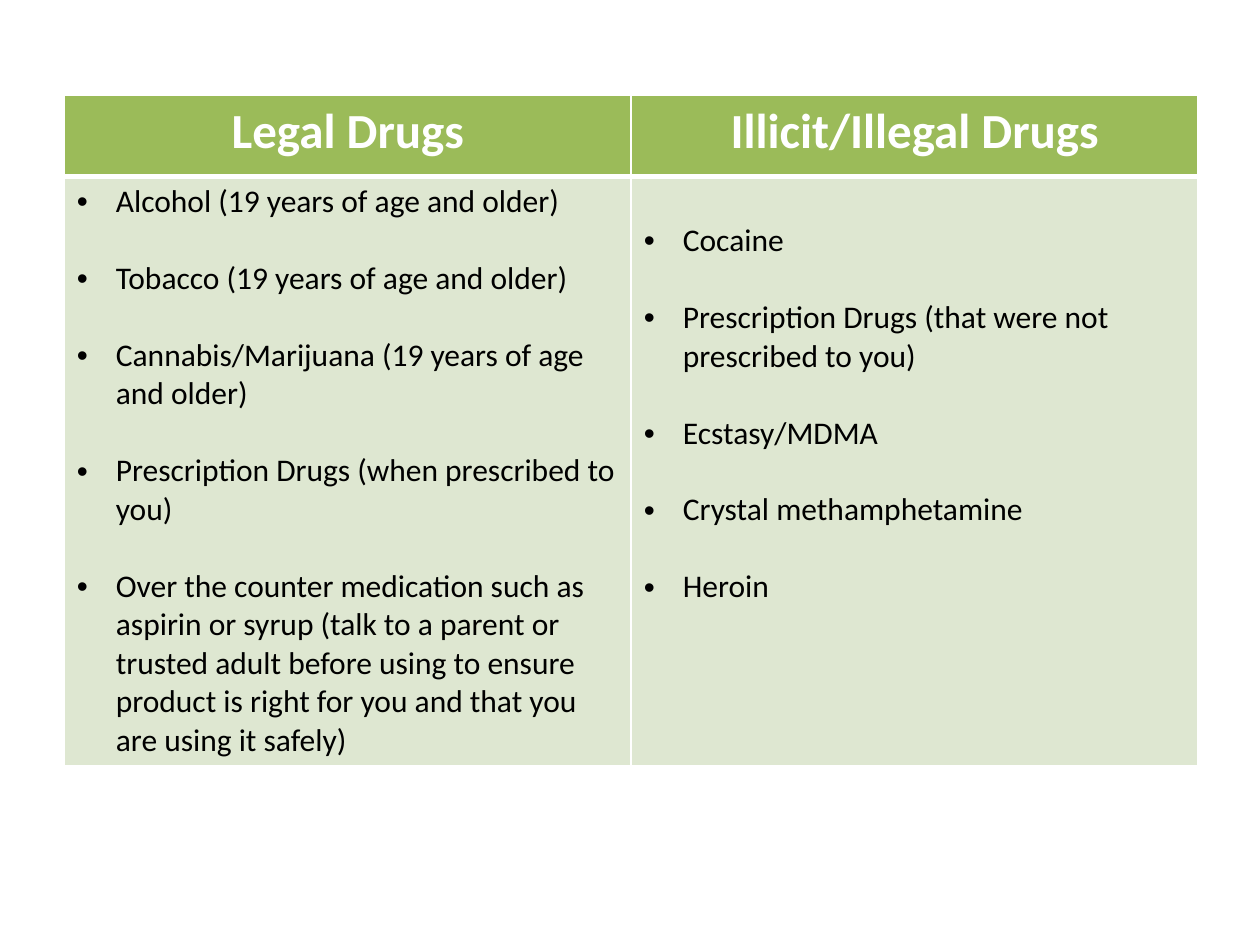
from lxml.etree import SubElement
from pptx import Presentation
from pptx.dml.color import RGBColor as RGB
from pptx.enum.text import PP_ALIGN as AL
from pptx.oxml.ns import qn
from pptx.util import Inches as In, Pt

COLORS = {"head": "9BBB59", "body": "DEE7D1", "white": "FFFFFF", "black": "000000"}
FONT = "Calibri"
COLUMNS = [
    ("Legal Drugs", 0.05, [
        "Alcohol (19 years of age and older)",
        "Tobacco (19 years of age and older)",
        "Cannabis/Marijuana (19 years of age and older)",
        "Prescription Drugs (when prescribed to you)",
        "Over the counter medication such as aspirin or syrup (talk to a parent "
        "or trusted adult before using to ensure product is right for you and "
        "that you are using it safely)",
    ]),
    ("Illicit/Illegal Drugs", 0.36, [
        "Cocaine",
        "Prescription Drugs (that were not prescribed to you)",
        "Ecstasy/MDMA",
        "Crystal methamphetamine",
        "Heroin",
    ]),
]
LEFT, TOP, COL_W = 0.51, 0.76, 4.5
ROW_H = [0.64, 4.66]
INDENT = 0.31
ITEM_GAP = 22


def add_text(p, text, size=18, color="black", bold=False, align=AL.LEFT,
             bullet=False, before=0):
    if bullet:
        pPr = p._p.get_or_add_pPr()
        pPr.set("marL", str(In(INDENT)))
        pPr.set("indent", str(-In(INDENT)))
        SubElement(pPr, qn("a:buFont"), typeface="Arial")
        SubElement(pPr, qn("a:buChar"), char="•")
    p.alignment = align
    p.space_before = Pt(before)
    r = p.add_run()
    r.text = text
    r.font.name, r.font.size, r.font.bold = FONT, Pt(size), bold
    r.font.color.rgb = RGB.from_string(COLORS[color])


def style_cell(cell, fill, **widths):
    tcPr = cell._tc.get_or_add_tcPr()
    for side in "LRTB":
        ln = SubElement(tcPr, qn(f"a:ln{side}"), w=str(Pt(widths.get(side, 1))))
        solid = SubElement(ln, qn("a:solidFill"))
        SubElement(solid, qn("a:srgbClr"), val=COLORS["white"])
    cell.fill.solid()
    cell.fill.fore_color.rgb = RGB.from_string(COLORS[fill])


prs = Presentation()
prs.slide_width, prs.slide_height = In(10), In(7.5)
s = prs.slides.add_slide(prs.slide_layouts[6])
table = s.shapes.add_table(len(ROW_H), len(COLUMNS), In(LEFT), In(TOP),
                           In(COL_W * len(COLUMNS)), In(sum(ROW_H))).table
table.first_row = table.horz_banding = False
for row, height in zip(table.rows, ROW_H):
    row.height = In(height)

for i, (title, margin, items) in enumerate(COLUMNS):
    table.columns[i].width = In(COL_W)
    head, body = table.cell(0, i), table.cell(1, i)
    style_cell(head, "head", B=3)
    style_cell(body, "body", T=3)
    add_text(head.text_frame.paragraphs[0], title, size=28, color="white",
             bold=True, align=AL.CENTER)
    body.margin_top = In(margin)
    tf = body.text_frame
    for n, item in enumerate(items):
        p = tf.add_paragraph() if n else tf.paragraphs[0]
        add_text(p, item, bullet=True, before=ITEM_GAP if n else 0)

prs.save("out.pptx")
